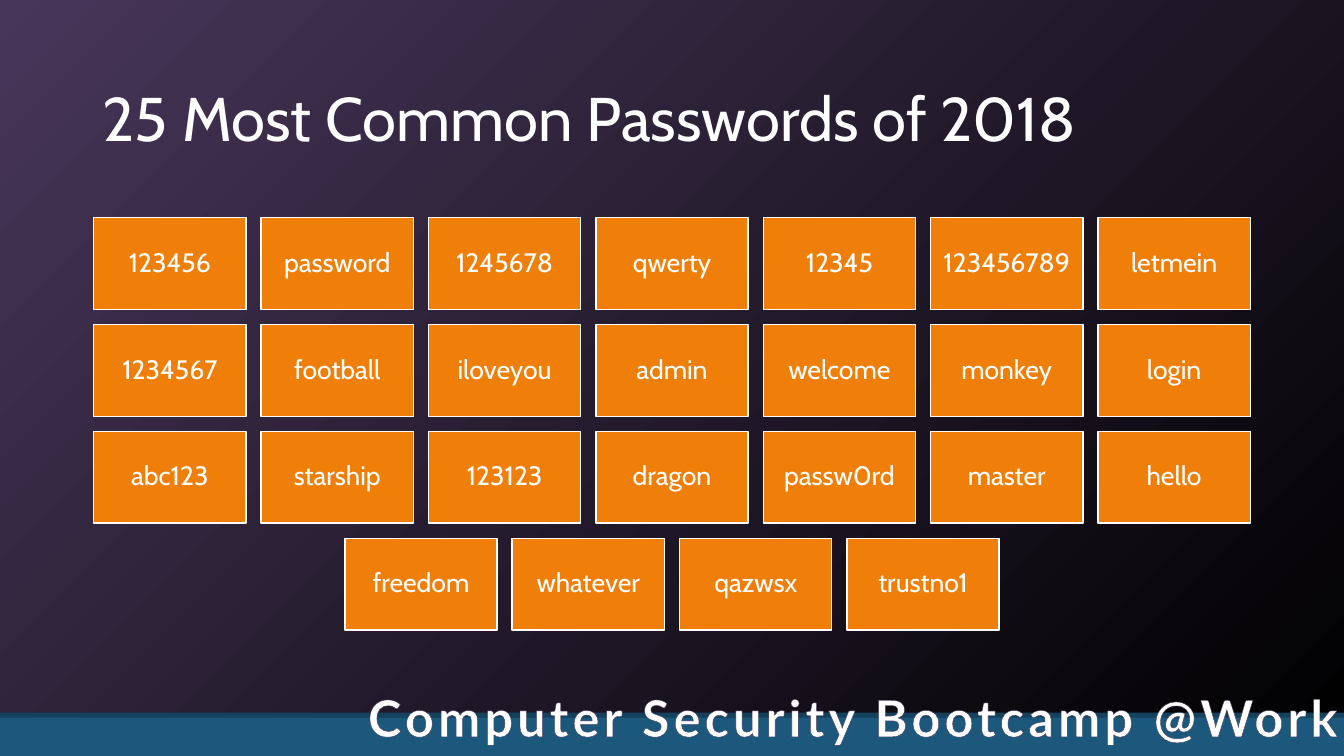
"""Build a slide that shows the 25 most common passwords of 2018 as a tile grid."""
from dataclasses import dataclass

import lxml.etree
import pptx
import pptx.dml.color
import pptx.enum.shapes
import pptx.enum.text
import pptx.oxml.ns
import pptx.util

Inches = pptx.util.Inches
Pt = pptx.util.Pt
Align = pptx.enum.text.PP_ALIGN
Anchor = pptx.enum.text.MSO_ANCHOR

COLORS = {
    "purple": "48365A",
    "black": "000000",
    "white": "FFFFFF",
    "orange": "F07F09",
    "blue": "1B587C",
    "dark_blue": "14425D",
}
SLIDE_WIDTH, SLIDE_HEIGHT = 13.33, 7.5
TILE_WIDTH, TILE_HEIGHT, TILE_GAP = 1.51, 0.91, 0.15
GRID_TOP = 2.16
PASSWORD_ROWS = [
    ["123456", "password", "1245678", "qwerty", "12345", "123456789", "letmein"],
    ["1234567", "football", "iloveyou", "admin", "welcome", "monkey", "login"],
    ["abc123", "starship", "123123", "dragon", "passw0rd", "master", "hello"],
    ["freedom", "whatever", "qazwsx", "trustno1"],
]


@dataclass(frozen=True)
class Box:
    left: float
    top: float
    width: float
    height: float

    def lengths(self) -> list[int]:
        return [Inches(value) for value in (self.left, self.top, self.width, self.height)]


def rgb(name: str) -> pptx.dml.color.RGBColor:
    return pptx.dml.color.RGBColor.from_string(COLORS[name])


def paint_background(slide) -> None:
    fill = slide.background.fill
    fill.gradient()
    fill.gradient_angle = 315
    for stop, name in zip(fill.gradient_stops, ("purple", "black")):
        stop.color.rgb = rgb(name)


def add_rectangle(slide, box: Box, fill: str, line: str | None = None):
    shape = slide.shapes.add_shape(pptx.enum.shapes.MSO_SHAPE.RECTANGLE, *box.lengths())
    shape.shadow.inherit = False
    shape.fill.solid()
    shape.fill.fore_color.rgb = rgb(fill)
    if line:
        shape.line.color.rgb = rgb(line)
        shape.line.width = Pt(1)
    else:
        shape.line.fill.background()
    return shape


def write_text(shape, text: str, *, size: float, font: str = "Cabin", bold: bool = False,
               align=Align.LEFT, anchor=Anchor.MIDDLE, line_spacing: float = 0.9,
               space_after: float = 0, inset: float | None = None):
    frame = shape.text_frame
    frame.word_wrap = True
    frame.vertical_anchor = anchor
    if inset is not None:
        frame.margin_left = frame.margin_right = Inches(inset)
        frame.margin_top = frame.margin_bottom = Inches(inset)
    paragraph = frame.paragraphs[0]
    paragraph.alignment = align
    paragraph.line_spacing = line_spacing
    paragraph.space_after = Pt(space_after)
    run = paragraph.add_run()
    run.text = text
    run.font.name = font
    run.font.size = Pt(size)
    run.font.bold = bold
    run.font.color.rgb = rgb("white")
    return run


def outline_text(run, color: str, width: float, letter_spacing: float) -> None:
    qn = pptx.oxml.ns.qn
    properties = run.font._element
    properties.set("spc", str(int(letter_spacing * 100)))
    outline = lxml.etree.Element(qn("a:ln"), w=str(Pt(width)))
    fill = lxml.etree.SubElement(outline, qn("a:solidFill"))
    lxml.etree.SubElement(fill, qn("a:srgbClr"), val=COLORS[color])
    properties.insert(0, outline)


def add_footer(slide) -> None:
    add_rectangle(slide, Box(0, 7.09, SLIDE_WIDTH, 0.41), "blue")
    add_rectangle(slide, Box(0, 7.07, SLIDE_WIDTH, 0.05), "dark_blue")
    footer = slide.shapes.add_textbox(*Box(3.22, 6.76, 10.16, 0.71).lengths())
    run = write_text(footer, "Computer Security Bootcamp @Work", size=36, font="Lato",
                     bold=True, align=Align.RIGHT, anchor=Anchor.TOP, line_spacing=1.0)
    footer.text_frame.auto_size = pptx.enum.text.MSO_AUTO_SIZE.SHAPE_TO_FIT_TEXT
    outline_text(run, "purple", 0.75, 3)


def add_password_grid(slide) -> None:
    for row, passwords in enumerate(PASSWORD_ROWS):
        row_width = len(passwords) * (TILE_WIDTH + TILE_GAP) - TILE_GAP
        row_left = (SLIDE_WIDTH - row_width) / 2
        top = GRID_TOP + row * (TILE_HEIGHT + TILE_GAP)
        for column, password in enumerate(passwords):
            left = row_left + column * (TILE_WIDTH + TILE_GAP)
            tile = add_rectangle(slide, Box(left, top, TILE_WIDTH, TILE_HEIGHT),
                                 "orange", "white")
            write_text(tile, password, size=19, align=Align.CENTER,
                       space_after=6.65, inset=0.08)


def main() -> None:
    presentation = pptx.Presentation()
    presentation.slide_width = Inches(SLIDE_WIDTH)
    presentation.slide_height = Inches(SLIDE_HEIGHT)
    slide = presentation.slides.add_slide(presentation.slide_layouts[6])
    paint_background(slide)
    add_footer(slide)
    title = slide.shapes.add_textbox(*Box(0.92, 0.58, 11.5, 1.26).lengths())
    write_text(title, "25 Most Common Passwords of 2018", size=44)
    add_password_grid(slide)
    presentation.save("out.pptx")


if __name__ == "__main__":
    main()
